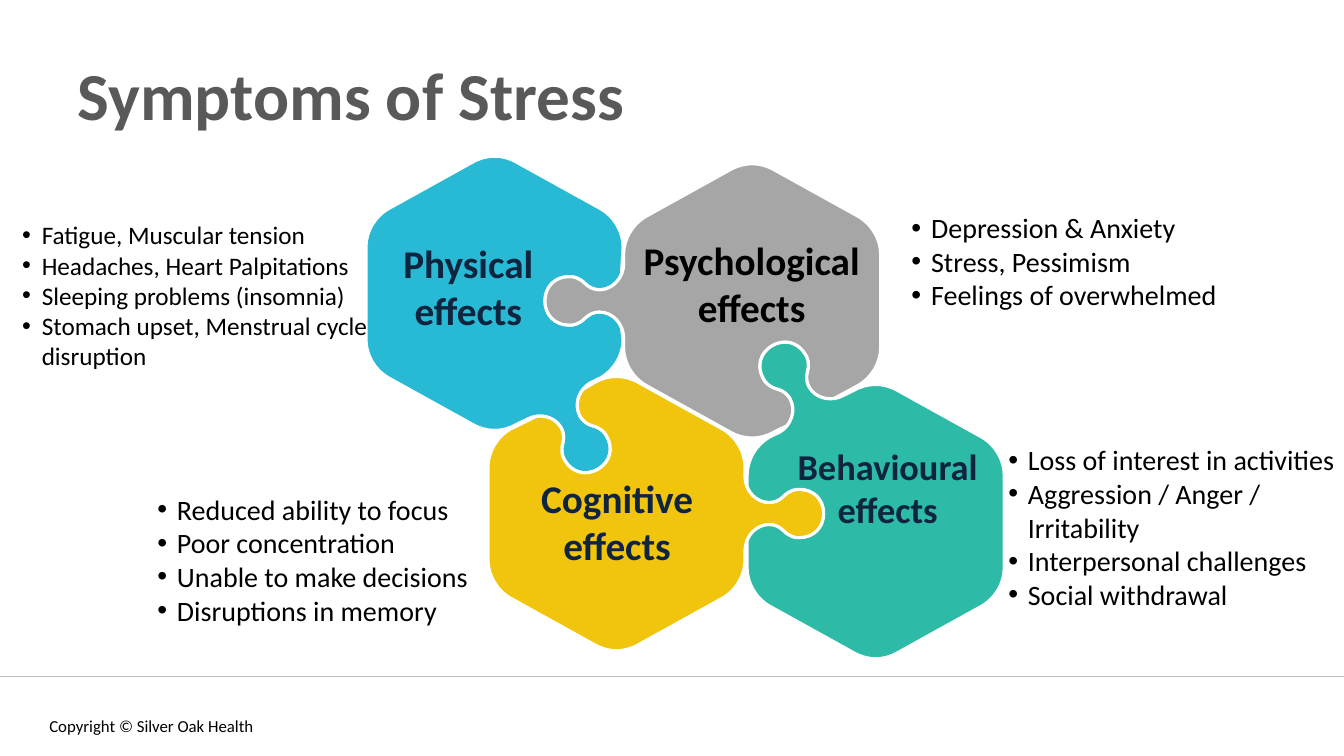
from dataclasses import dataclass
from math import cos, radians, sin

from lxml.etree import SubElement
from pptx import Presentation
from pptx.dml.color import RGBColor
from pptx.enum.shapes import MSO_CONNECTOR
from pptx.enum.text import MSO_ANCHOR, MSO_AUTO_SIZE, PP_ALIGN
from pptx.oxml.ns import qn
from pptx.util import Inches, Pt

COLORS = {
    "blue": "28B9D4", "grey": "A6A6A6", "yellow": "F1C50E", "green": "2DBAA7",
    "navy": "0F243E", "black": "000000", "white": "FFFFFF",
    "title": "595959", "rule": "BFBFBF",
}
WIDTH, HEIGHT = Inches(13.33), Inches(7.5)
CELL = HEIGHT / 75  # square grid cell: 75 rows, about 133 columns
SIDES = ("upper right", "right", "lower right", "lower left", "left", "upper left")

# Corner curves of a hexagon around (0, 0), clockwise, in cells
TOP = [(-2.2, -13), (-1.5, -13.4), (-0.8, -13.6), (0, -13.6),
       (0.8, -13.6), (1.5, -13.4), (2.2, -13)]
UPPER_RIGHT = [(10.5, -8.4), (11.9, -7.6), (12.75, -6.1), (12.75, -4.6)]
LOWER_RIGHT = [(x, -y) for x, y in reversed(UPPER_RIGHT)]
CORNERS = [TOP, UPPER_RIGHT, LOWER_RIGHT]
CORNERS += [[(-x, -y) for x, y in corner] for corner in CORNERS]

# Half a knob as chained curves: (outwards, along the side)
KNOB_BASE = [(0, -3.6), (0, -2.4), (1, -1.1)]
SOCKET_BASE = [(0.2, -2.7), (0.5, -1.8), (1.4, -1.1)]
KNOB_HEAD = [(2.4, -1.1), (2.9, -1.1), (3.4, -1.3), (3.8, -1.7),
             (4.1, -2), (4.4, -2.2), (4.7, -2.3),
             (4.9, -2.4), (5.2, -2.4), (5.4, -2.4),
             (6.8, -2.4), (7.8, -1.4), (7.8, 0)]


@dataclass
class Effect:
    label: str
    fill: str
    text_color: str
    label_size: int
    center: tuple
    label_box: tuple  # left and top from the center, width, height
    list_box: tuple
    list_size: int
    symptoms: list


EFFECTS = {
    "physical": Effect(
        "Physical effects", "blue", "navy", 28, (49.05, 29.1),
        (-13.05, -5.9, 20.9, 10.4), (-46.85, -7.8, 34.4, 16.2), 18,
        ["Fatigue, Muscular tension", "Headaches, Heart Palpitations",
         "Sleeping problems (insomnia)", "Stomach upset, Menstrual cycle disruption"]),
    "psychological": Effect(
        "Psychological effects", "grey", "black", 28, (74.6, 29.85),
        (-11.95, -6.95, 23.8, 10.4), (15.8, -9.45, 33.2, 11.1), 20,
        ["Depression & Anxiety", "Stress, Pessimism", "Feelings of overwhelmed"]),
    "cognitive": Effect(
        "Cognitive effects", "yellow", "navy", 28, (61.15, 50.95),
        (-11.85, -4.45, 23.8, 10.4), (-45.55, -2.6, 38.5, 14.5), 20,
        ["Reduced ability to focus", "Poor concentration",
         "Unable to make decisions", "Disruptions in memory"]),
    "behavioural": Effect(
        "Behavioural effects", "green", "navy", 26, (86.85, 51.75),
        (-9.05, -8.3, 20.5, 9.8), (13.15, -8.3, 32.9, 17.8), 20,
        ["Loss of interest in activities", "Aggression / Anger / Irritability",
         "Interpersonal challenges", "Social withdrawal"]),
}
# Owner of the knob, its side, neighbour with the socket, its side
JOINTS = [
    ("psychological", "left", "physical", "right"),
    ("physical", "lower right", "cognitive", "upper left"),
    ("behavioural", "upper left", "psychological", "lower right"),
    ("cognitive", "right", "behavioural", "left"),
]


def color(name):
    return RGBColor.from_string(COLORS[name])


def format_with(target, values):
    for name, value in values.items():
        setattr(target, name, value)


def knob_points(center, side, base):
    index = SIDES.index(side)
    start, end = CORNERS[index][-1], CORNERS[(index + 1) % 6][0]
    middle = [center[axis] + (start[axis] + end[axis]) / 2 for axis in (0, 1)]
    angle = radians(60 * (index - 1))
    half = base + KNOB_HEAD
    knob = half + [(out, -along) for out, along in reversed(half[:-1])]
    return [(middle[0] + out * cos(angle) - along * sin(angle),
             middle[1] + out * sin(angle) + along * cos(angle)) for out, along in knob]


def piece_chains(name):
    """List the chains of curves, joined by straight lines, around a piece."""
    center = EFFECTS[name].center
    seams = {}
    for owner, side, neighbour, socket_side in JOINTS:
        owner_center = EFFECTS[owner].center
        if name == owner:
            seams[side] = knob_points(owner_center, side, KNOB_BASE)
        elif name == neighbour:
            seams[socket_side] = knob_points(owner_center, side, SOCKET_BASE)[::-1]
    chains = []
    for side, corner in zip(SIDES, CORNERS):
        chains.append([(center[0] + x, center[1] + y) for x, y in corner])
        if side in seams:
            chains.append(seams[side])
    return [[(x * CELL, y * CELL) for x, y in chain] for chain in chains]


def build_curved_shape(slide, chains):
    segments = []  # control points and end point of each segment
    for chain in chains:
        segments.append(chain[:1])
        segments += [chain[i:i + 3] for i in range(1, len(chain), 3)]
    builder = slide.shapes.build_freeform(*segments[0][-1])
    builder.add_line_segments([segment[-1] for segment in segments[1:]], close=True)
    shape = builder.convert_to_shape()
    lines = list(shape._element.spPr.iter(qn("a:lnTo")))
    for line, segment in zip(lines, segments[1:]):
        if len(segment) == 3:
            line.tag = qn("a:cubicBezTo")
            end_point = line[0]
            for x, y in segment[:2]:
                control = SubElement(line, qn("a:pt"), x=str(round(x - shape.left)),
                                     y=str(round(y - shape.top)))
                end_point.addprevious(control)
    return shape


def add_piece(slide, name, fill):
    piece = build_curved_shape(slide, piece_chains(name))
    piece.shadow.inherit = False
    piece.fill.solid()
    piece.fill.fore_color.rgb = color(fill)
    piece.line.color.rgb = color("white")
    piece.line.width = Pt(2.25)


def format_font(font, size, color_name, bold=False):
    format_with(font, {"name": "Calibri", "size": Pt(size), "bold": bold})
    font.color.rgb = color(color_name)


def add_text(slide, box, lines, font, align=PP_ALIGN.LEFT, bullets=False, **frame_format):
    text_box = slide.shapes.add_textbox(*(round(value * CELL) for value in box))
    frame = text_box.text_frame
    format_with(frame, {"word_wrap": True, **frame_format})
    for index, line in enumerate(lines):
        paragraph = frame.paragraphs[0] if index == 0 else frame.add_paragraph()
        paragraph.text = line
        paragraph.alignment = align
        if bullets:
            properties = paragraph._p.get_or_add_pPr()
            properties.set("marL", str(Pt(14)))
            properties.set("indent", str(-Pt(14)))
            SubElement(properties, qn("a:buFont"), typeface="Arial")
            SubElement(properties, qn("a:buChar"), char="•")
        format_font(paragraph.font, **font)


def add_effect(slide, name, effect):
    """Draw a puzzle piece with its label and its list of symptoms."""
    def from_center(box):
        return (effect.center[0] + box[0], effect.center[1] + box[1], *box[2:])

    add_piece(slide, name, effect.fill)
    add_text(slide, from_center(effect.label_box), [effect.label],
             {"size": effect.label_size, "color_name": effect.text_color, "bold": True},
             PP_ALIGN.CENTER, vertical_anchor=MSO_ANCHOR.MIDDLE,
             auto_size=MSO_AUTO_SIZE.SHAPE_TO_FIT_TEXT)
    add_text(slide, from_center(effect.list_box), effect.symptoms,
             {"size": effect.list_size, "color_name": "black"}, bullets=True,
             margin_left=0, margin_right=0, auto_size=MSO_AUTO_SIZE.SHAPE_TO_FIT_TEXT)


def add_footer(slide, top):
    rule = slide.shapes.add_connector(MSO_CONNECTOR.STRAIGHT, 0, round(top * CELL),
                                      WIDTH, round(top * CELL))
    rule.line.color.rgb = color("rule")
    rule.line.width = Pt(0.75)
    SubElement(rule._element.spPr, qn("a:effectLst"))
    add_text(slide, (3.9, top + 3.7, 40.2, 2.5), ["Copyright © Silver Oak Health"],
             {"size": 12, "color_name": "black"}, vertical_anchor=MSO_ANCHOR.MIDDLE)


def format_title(title, text, box):
    format_with(title, dict(zip(("left", "top", "width", "height"),
                                (round(value * CELL) for value in box))))
    title.text_frame.text = text
    title.text_frame.vertical_anchor = MSO_ANCHOR.MIDDLE
    paragraph = title.text_frame.paragraphs[0]
    paragraph.alignment = PP_ALIGN.LEFT
    format_font(paragraph.font, 48, "title", bold=True)


def main():
    presentation = Presentation()
    format_with(presentation, {"slide_width": WIDTH, "slide_height": HEIGHT})
    slide = presentation.slides.add_slide(presentation.slide_layouts[5])
    add_footer(slide, 67.1)
    format_title(slide.shapes.title, "Symptoms of Stress", (6.7, 3, 120, 12.5))
    for name, effect in EFFECTS.items():
        add_effect(slide, name, effect)
    presentation.save("out.pptx")


if __name__ == "__main__":
    main()
